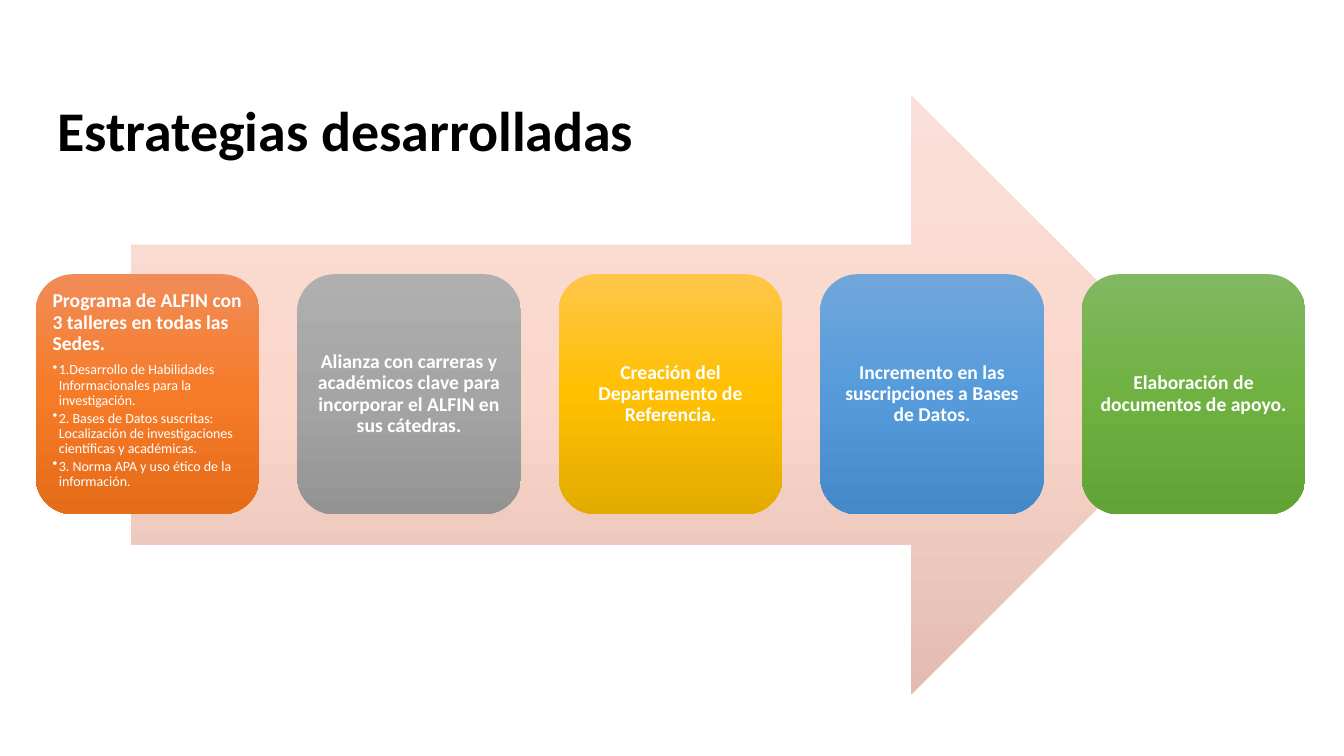
from pptx import Presentation
from pptx.util import Cm, Pt
from pptx.dml.color import RGBColor
from pptx.enum.shapes import MSO_SHAPE
from pptx.enum.text import MSO_ANCHOR, PP_ALIGN
from pptx.oxml import parse_xml
from pptx.oxml.ns import nsdecls, qn
from copy import deepcopy

ARROW, ROUND = MSO_SHAPE.RIGHT_ARROW, MSO_SHAPE.ROUNDED_RECTANGLE
TOP, MIDDLE = MSO_ANCHOR.TOP, MSO_ANCHOR.MIDDLE
LEFT, CENTER = PP_ALIGN.LEFT, PP_ALIGN.CENTER


def add_block(kind, box, tones):
    shape = slide.shapes.add_shape(kind, *[Cm(n) for n in box])
    shape.shadow.inherit = False
    shape.line.fill.background()
    shape.fill.gradient()
    shape.fill.gradient_angle = 270
    stops = shape._element.spPr.find(qn("a:gradFill")).find(qn("a:gsLst"))
    stops.insert(1, deepcopy(stops[0]))
    for stop, spot, tone in zip(shape.fill.gradient_stops, (0, 0.5, 1), tones):
        stop.position = spot
        stop.color.rgb = RGBColor.from_string(tone)
    return shape


def add_text(para, text, size, bold, tone, align, after):
    para.text = text
    for name, value in {"alignment": align, "line_spacing": 0.9, "space_after": Pt(after)}.items():
        setattr(para, name, value)
    font = para.runs[0].font
    for name, value in {"name": "Calibri", "size": Pt(size), "bold": bold}.items():
        setattr(font, name, value)
    font.color.rgb = RGBColor.from_string(tone)


deck = Presentation()
deck.slide_width, deck.slide_height = Cm(33.87), Cm(19.05)
slide = deck.slides.add_slide(deck.slide_layouts[6])

title = slide.shapes.add_textbox(Cm(1.2), Cm(2), Cm(30.1), Cm(2.72)).text_frame
title.word_wrap = True
title.vertical_anchor = MIDDLE
add_text(title.paragraphs[0], "Estrategias desarrolladas", 40, True, "000000", LEFT, 0)

add_block(ARROW, (3.29, 2.4, 27.22, 15.09), ("FAE0D8", "FAD6CB", "E2BCB1"))

cards = [
    ("Programa de ALFIN con 3 talleres en todas las Sedes.", ("F18C57", "F67B28", "E56C19"), [
        "1.Desarrollo de Habilidades Informacionales para la investigación.",
        "2. Bases de Datos suscritas: Localización de investigaciones científicas y académicas.",
        "3. Norma APA y uso ético de la información.",
    ]),
    ("Alianza con carreras y académicos clave para incorporar el ALFIN en sus cátedras.",
     ("AFAFAF", "A5A5A5", "939393"), []),
    ("Creación del Departamento de Referencia.", ("FFC64B", "FFC000", "E3AB00"), []),
    ("Incremento en las suscripciones a Bases de Datos.", ("71A6DB", "559BDB", "448ACA"), []),
    ("Elaboración de documentos de apoyo.", ("81B861", "6FB242", "62A336"), []),
]
for col, (head, tones, items) in enumerate(cards):
    card = add_block(ROUND, (0.9 + 6.59 * col, 6.91, 5.64, 6.05), tones)
    frame = card.text_frame
    frame.word_wrap = True
    frame.vertical_anchor = TOP if items else MIDDLE
    for side in ("left", "top", "right", "bottom"):
        setattr(frame, "margin_" + side, Cm(0.15))
    add_text(frame.paragraphs[0], head, 14, True, "FFFFFF", LEFT if items else CENTER, 5.9)
    for item in items:
        para = frame.add_paragraph()
        para.level = 1
        props = para._p.get_or_add_pPr()
        props.set("marL", str(Cm(0.16)))
        props.set("indent", str(-Cm(0.16)))
        props.append(parse_xml(f'<a:buChar {nsdecls("a")} char="•"/>'))
        add_text(para, item, 10, False, "FFFFFF", LEFT, 1.8)

deck.save("out.pptx")
